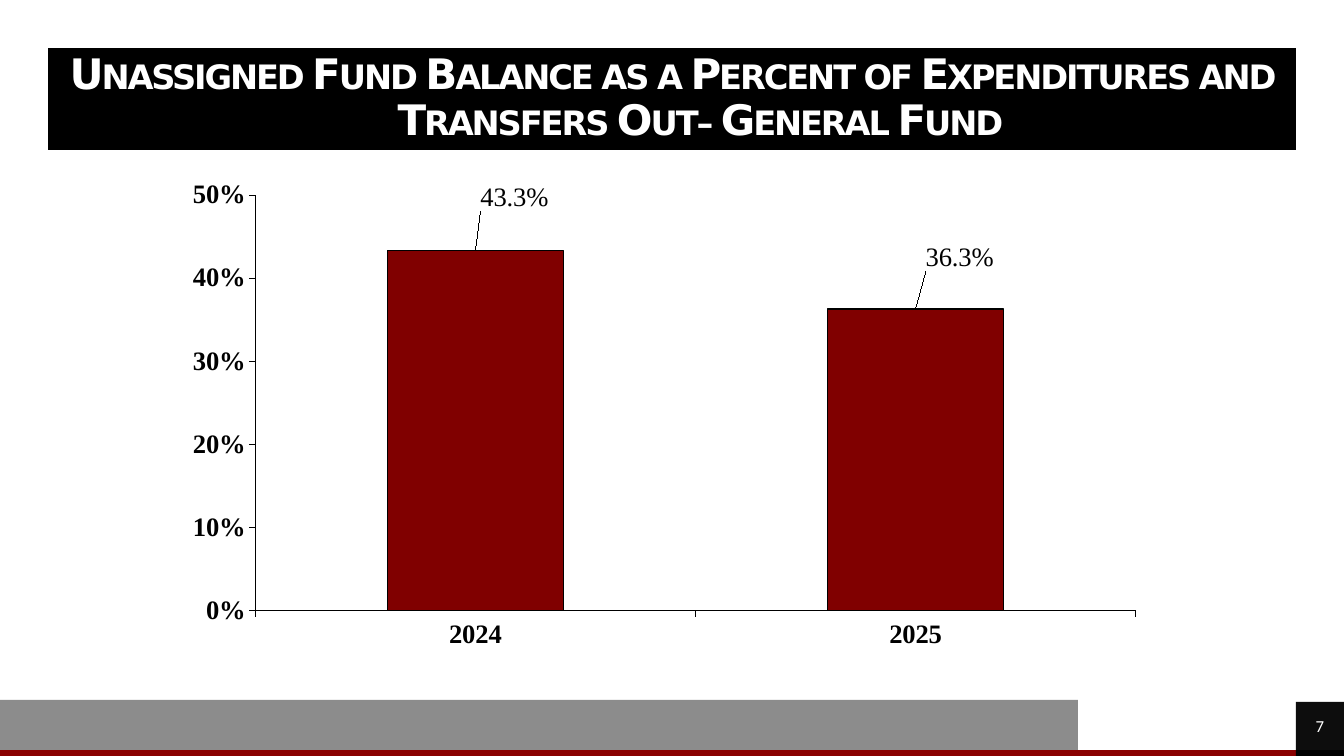
from lxml.etree import SubElement
from pptx import Presentation
from pptx.chart.data import CategoryChartData
from pptx.dml.color import RGBColor
from pptx.enum.chart import XL_CHART_TYPE, XL_LABEL_POSITION, XL_TICK_LABEL_POSITION, XL_TICK_MARK
from pptx.enum.shapes import MSO_SHAPE
from pptx.enum.text import MSO_ANCHOR, MSO_AUTO_SIZE, PP_ALIGN
from pptx.oxml import parse_xml
from pptx.oxml.ns import nsdecls, qn
from pptx.util import Emu, Pt

EMU_PER_PX = 914400 / 100.8
BLACK = RGBColor(0, 0, 0)
NEAR_BLACK = RGBColor(0x0D, 0x0D, 0x0D)
WHITE = RGBColor(0xFF, 0xFF, 0xFF)
GRAY = RGBColor(0x8C, 0x8C, 0x8C)
RED = RGBColor(0x8A, 0, 0)
MAROON = RGBColor(0x80, 0, 0)
TITLE = "Unassigned Fund Balance as a Percent of Expenditures and Transfers Out– General Fund"
FUND_BALANCE = {"2024": 0.433, "2025": 0.363}
LABEL_OFFSETS = [(0.038, -0.065), (0.043, -0.061)]
PLOT_AREA = {"x": 0.13, "y": 0.105, "w": 0.858, "h": 0.769}


def px(length):
    """Turn pixels into EMU."""
    return Emu(round(length * EMU_PER_PX))


def set_font(font, name, size, color, bold=False):
    """Set the face, size, colour and weight of a font."""
    font.name = name
    font.size = Pt(size)
    font.bold = bold
    font.color.rgb = color


def set_text(shape, text, name, size, bold=False):
    """Write centred white text without margins."""
    frame = shape.text_frame
    frame.text = text
    frame.word_wrap = True
    frame.auto_size = MSO_AUTO_SIZE.NONE
    frame.vertical_anchor = MSO_ANCHOR.MIDDLE
    frame.margin_left = frame.margin_right = frame.margin_top = frame.margin_bottom = 0
    paragraph = frame.paragraphs[0]
    paragraph.alignment = PP_ALIGN.CENTER
    set_font(paragraph.runs[0].font, name, size, WHITE, bold)
    return paragraph


def add_block(slide, left, top, width, height, color):
    """Add a plain filled rectangle."""
    block = slide.shapes.add_shape(MSO_SHAPE.RECTANGLE, px(left), px(top), px(width), px(height))
    block.shadow.inherit = False
    block.fill.solid()
    block.fill.fore_color.rgb = color
    block.line.fill.background()
    return block


def format_title(title):
    """Place the title on its black band in small capitals."""
    title.left, title.top, title.width, title.height = px(48), px(48), px(1248), px(102)
    title.fill.solid()
    title.fill.fore_color.rgb = BLACK
    paragraph = set_text(title, TITLE, "DejaVu Sans", 30, True)
    paragraph.line_spacing = 0.9
    properties = paragraph.runs[0].font._element
    properties.set("cap", "small")
    properties.set("spc", "-150")


def format_axis(axis):
    """Give an axis a thin black line, outer ticks and bold labels."""
    axis.has_major_gridlines = False
    axis.major_tick_mark = XL_TICK_MARK.OUTSIDE
    axis.minor_tick_mark = XL_TICK_MARK.NONE
    axis.format.line.color.rgb = BLACK
    axis.format.line.width = Pt(0.29)
    set_font(axis.tick_labels.font, "Times New Roman", 19, BLACK, True)


def manual_layout(**values):
    """Build a layout element from named values."""
    layout = parse_xml(f"<c:layout {nsdecls('c')}><c:manualLayout/></c:layout>")
    for name, value in values.items():
        SubElement(layout[0], qn(f"c:{name}")).set("val", str(value))
    return layout


def place_plot(chart):
    """Fix the inner plot area within the chart."""
    plot_area = chart._chartSpace.chart.plotArea
    for layout in plot_area.findall(qn("c:layout")):
        plot_area.remove(layout)
    plot_area.insert(0, manual_layout(layoutTarget="inner", xMode="edge", yMode="edge", **PLOT_AREA))


def label_bars(series):
    """Show each value above and to the right of its bar."""
    for index, (x, y) in enumerate(LABEL_OFFSETS):
        label = series.points[index].data_label
        set_font(label.font, "Times New Roman", 19, BLACK)
        label.position = XL_LABEL_POSITION.OUTSIDE_END
        element = series._element.find(qn("c:dLbls")).findall(qn("c:dLbl"))[index]
        element.insert(1, manual_layout(x=x, y=y))


def add_balance_chart(slide):
    """Add the column chart of fund balance percentages."""
    data = CategoryChartData(number_format="0.0%")
    data.categories = list(FUND_BALANCE)
    data.add_series("Series 1", list(FUND_BALANCE.values()))
    frame = slide.shapes.add_chart(
        XL_CHART_TYPE.COLUMN_CLUSTERED, px(122), px(138), px(1026), px(541), data)
    chart = frame.chart
    chart.has_legend = False
    chart.has_title = False
    set_font(chart.font, "Times New Roman", 21.1, BLACK, True)
    format_axis(chart.category_axis)
    chart.category_axis.tick_label_position = XL_TICK_LABEL_POSITION.LOW
    value_axis = chart.value_axis
    format_axis(value_axis)
    value_axis.minimum_scale, value_axis.maximum_scale, value_axis.major_unit = 0, 0.5, 0.1
    value_axis.tick_labels.number_format = "0%"
    value_axis.tick_labels.number_format_is_linked = False
    plot = chart.plots[0]
    plot.gap_width = 150
    plot.vary_by_categories = False
    series = plot.series[0]
    series.format.fill.solid()
    series.format.fill.fore_color.rgb = MAROON
    series.format.line.color.rgb = BLACK
    series.format.line.width = Pt(1.17)
    label_bars(series)
    place_plot(chart)


def main():
    """Build and save the slide."""
    presentation = Presentation()
    presentation.slide_width, presentation.slide_height = px(1344), px(756)
    slide = presentation.slides.add_slide(presentation.slide_layouts[5])
    format_title(slide.shapes.title)
    add_block(slide, 1078, 750, 218, 6, RED)
    add_block(slide, 0, 700, 1078, 50, GRAY)
    add_block(slide, 0, 750, 1078, 6, RED)
    add_block(slide, 1296, 750, 48, 6, BLACK)
    page_number = add_block(slide, 1296, 702, 48, 48, NEAR_BLACK)
    set_text(page_number, "7", "Calibri", 12)
    add_balance_chart(slide)
    presentation.save("out.pptx")


if __name__ == "__main__":
    main()
